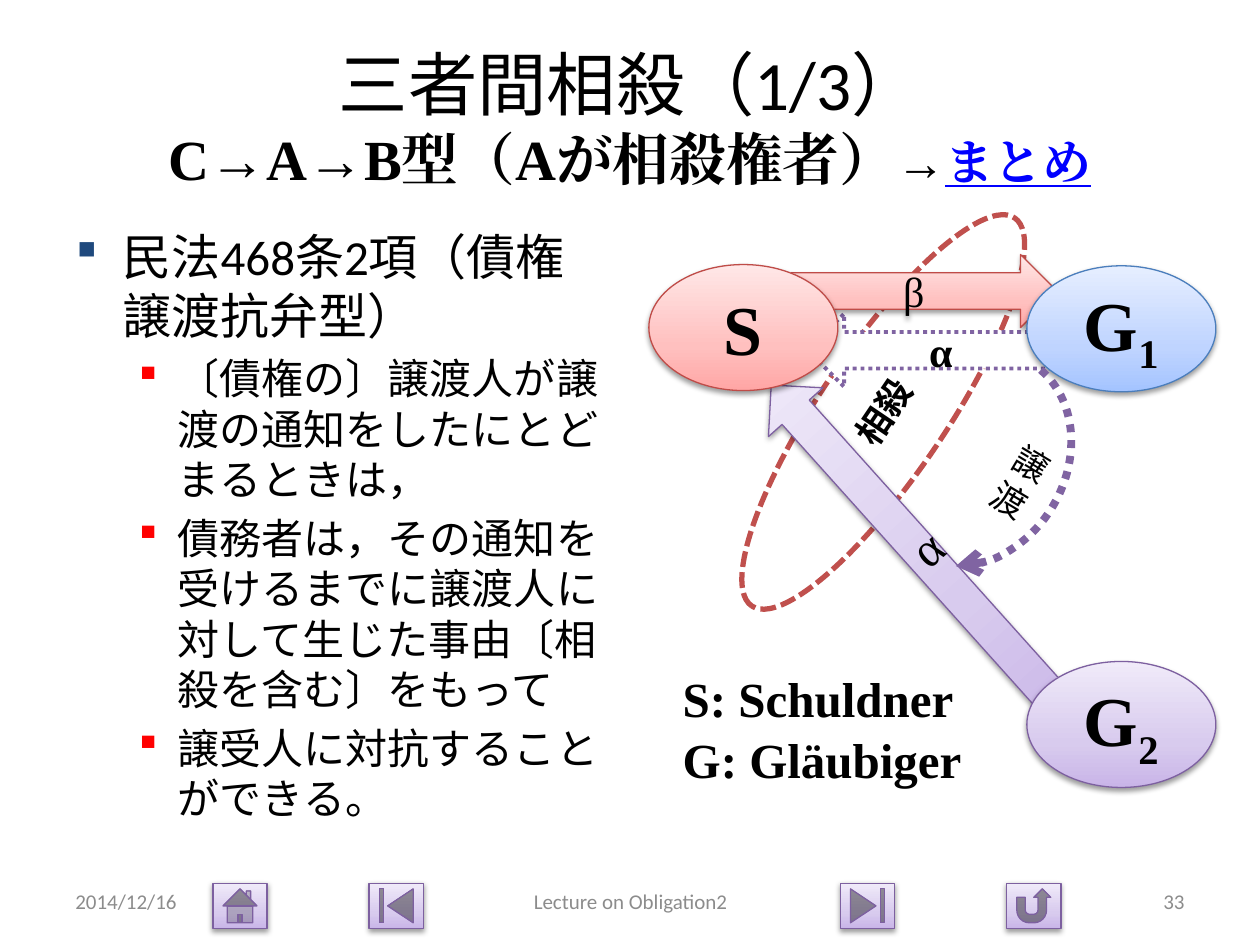
from dataclasses import dataclass

from pptx import Presentation
from pptx import util as u
from pptx.dml.color import RGBColor
from pptx.enum import dml, shapes, text
from pptx.oxml import parse_xml
from pptx.oxml.ns import nsdecls, qn

COLUMNS, ROWS = 100, 75
CELL = u.Inches(0.1)
CENTER = text.PP_ALIGN.CENTER
KIND = shapes.MSO_SHAPE


@dataclass(frozen=True)
class Theme:
    sans: str = "Calibri"
    serif: str = "Times New Roman"
    gothic: str = "Noto Sans CJK JP"
    ink: str = "000000"
    paper: str = "FFFFFF"
    muted: str = "8C8C8C"
    link: str = "0000FF"
    main_bullet: str = "1F497D"
    sub_bullet: str = "FF0000"
    offset_line: str = "C0504D"
    claim_line: str = "8064A2"
    red: tuple = ("BF4C48", "FFA6A5", "FFC0BF", "FFE7E7")
    blue: tuple = ("4B7EBC", "A4C4FF", "BFD4FF", "E6EEFF")
    purple: tuple = ("7D60A0", "C9B5E8", "D8CBEE", "F0EAF9")
    heading: float = 39.6
    subheading: float = 32.4
    link_size: float = 27.9
    party: float = 40
    body: float = 28
    detail: float = 24
    label: float = 20
    footer: float = 12


THEME = Theme()


def grid(*cells):
    return [round(cell * CELL) for cell in cells]


def write(paragraph, words, size, font=THEME.sans, color=THEME.ink,
          bold=False, underline=False, baseline=0, align=None):
    if align is not None:
        paragraph.alignment = align
    run = paragraph.add_run()
    run.text = words
    run.font.size = u.Pt(size)
    run.font.name = font
    run.font.bold = bold
    run.font.underline = underline
    run.font.color.rgb = RGBColor.from_string(color)
    props = run._r.get_or_add_rPr()
    props.find(qn("a:latin")).addnext(
        parse_xml(f'<a:ea {nsdecls("a")} typeface="{font}"/>'))
    if baseline:
        props.set("baseline", str(baseline * 1000))


def add_outline(slide, kind, cells, color, width, dash=None, fill=None, turn=0):
    figure = slide.shapes.add_shape(kind, *grid(*cells))
    figure.shadow.inherit = False
    figure.rotation = turn
    figure.line.color.rgb = RGBColor.from_string(color)
    figure.line.width = u.Pt(width)
    if dash is not None:
        figure.line.dash_style = dash
    if fill:
        figure.fill.solid()
        figure.fill.fore_color.rgb = RGBColor.from_string(fill)
    else:
        figure.fill.background()
    figure.text_frame.word_wrap = True
    figure.text_frame.vertical_anchor = text.MSO_ANCHOR.MIDDLE
    return figure


def add_glossy(slide, kind, cells, palette, turn=0):
    line, *tints = palette
    figure = add_outline(slide, kind, cells, line, 0.75, turn=turn)
    figure.fill.gradient()
    figure.fill.gradient_angle = 90
    props = figure._element.spPr
    stops = next(props.iter(qn("a:gsLst")))
    for stop in list(stops):
        stops.remove(stop)
    for share, tint in zip((0, 35, 100), tints):
        stops.append(parse_xml(
            f'<a:gs {nsdecls("a")} pos="{share * 1000}"><a:srgbClr val="{tint}"/></a:gs>'))
    props.find(qn("a:effectLst")).append(parse_xml(
        f'<a:outerShdw {nsdecls("a")} blurRad="{u.Pt(3.1)}" dist="{u.Pt(1.6)}" '
        'dir="5400000" rotWithShape="0"><a:srgbClr val="000000">'
        '<a:alpha val="38000"/></a:srgbClr></a:outerShdw>'))
    return figure


def label(figure, words, size, **style):
    write(figure.text_frame.paragraphs[0], words, size, align=CENTER, **style)


def add_party(slide, cells, palette, letter, index=""):
    party = add_glossy(slide, KIND.OVAL, cells, palette)
    label(party, letter, THEME.party, font=THEME.serif, bold=True)
    if index:
        label(party, index, THEME.party, font=THEME.serif, bold=True, baseline=-25)


def add_text(slide, cells, lines, size, anchor=text.MSO_ANCHOR.TOP, spacing=1.0, **style):
    frame = slide.shapes.add_textbox(*grid(*cells)).text_frame
    frame.word_wrap = True
    frame.vertical_anchor = anchor
    for number, words in enumerate(lines):
        paragraph = frame.add_paragraph() if number else frame.paragraphs[0]
        paragraph.line_spacing = spacing
        write(paragraph, words, size, **style)


def place(placeholder, cells):
    placeholder.left, placeholder.top, placeholder.width, placeholder.height = grid(*cells)
    placeholder.text_frame.auto_size = text.MSO_AUTO_SIZE.NONE
    return placeholder.text_frame


def fill_title(slide):
    frame = place(slide.shapes.title, (5, 3, 90, 12.5))
    frame.vertical_anchor = text.MSO_ANCHOR.MIDDLE
    heading = frame.paragraphs[0]
    write(heading, "三者間相殺（1/3）", THEME.heading, align=CENTER)
    heading.add_line_break()
    serif = dict(font=THEME.serif, bold=True)
    write(heading, "C→A→B型（Aが相殺権者）", THEME.subheading, **serif)
    write(heading, "→", THEME.link_size, **serif)
    write(heading, "まとめ", THEME.link_size, color=THEME.link, underline=True, **serif)


def fill_body(slide):
    frame = place(slide.placeholders[1], (5, 17.5, 44.2, 49.5))
    provisions = [
        (0, "民法468条2項（債権譲渡抗弁型）"),
        (1, "〔債権の〕譲渡人が譲渡の通知をしたにとどまるときは，"),
        (1, "債務者は，その通知を受けるまでに譲渡人に対して生じた事由〔相殺を含む〕をもって"),
        (1, "譲受人に対抗することができる。"),
    ]
    for number, (level, words) in enumerate(provisions):
        paragraph = frame.add_paragraph() if number else frame.paragraphs[0]
        paragraph.level = level
        color = (THEME.main_bullet, THEME.sub_bullet)[level]
        props = paragraph._p.get_or_add_pPr()
        for mark in (f'buClr {nsdecls("a")}><a:srgbClr val="{color}"/></a:buClr>',
                     f'buFont {nsdecls("a")} typeface="Wingdings" charset="2"/>',
                     f'buChar {nsdecls("a")} char="§"/>'):
            props.append(parse_xml("<a:" + mark))
        write(paragraph, words, (THEME.body, THEME.detail)[level])


def draw_claims(slide):
    offset = add_outline(slide, KIND.OVAL, (51.5, 27.7, 37.2, 10), THEME.offset_line, 3,
                         dml.MSO_LINE.SQUARE_DOT, turn=304.1)
    label(offset, "相殺", THEME.label, font=THEME.gothic, bold=True)
    old_claim = add_outline(slide, KIND.LEFT_ARROW, (64.1, 24.9, 19.7, 5.8),
                            THEME.claim_line, 2.25, dml.MSO_LINE.ROUND_DOT, fill=THEME.paper)
    label(old_claim, "α", THEME.detail, font=THEME.serif, bold=True)
    counterclaim = add_glossy(slide, KIND.RIGHT_ARROW, (62.6, 20.2, 21.3, 5.8), THEME.red)
    label(counterclaim, "β", THEME.detail, font=THEME.serif)
    new_claim = add_glossy(slide, KIND.UP_ARROW, (69.7, 26.2, 5.8, 34.1), THEME.purple, 318.1)
    label(new_claim, "α", THEME.body, font=THEME.serif)


def draw_assignment(slide):
    assignment = add_outline(slide, KIND.ARC, (69.8, 27.5, 14.8, 17.8), THEME.claim_line, 4.5,
                             dml.MSO_LINE.ROUND_DOT, turn=31)
    assignment.adjustments[0] = 165.92
    assignment.adjustments[1] = 40.73
    assignment.line._get_or_add_ln().append(
        parse_xml(f'<a:tailEnd {nsdecls("a")} type="arrow"/>'))
    label(assignment, "譲渡", THEME.label, font=THEME.gothic)


def add_footer(slide):
    buttons = [(16.9, KIND.ACTION_BUTTON_HOME), (29.3, KIND.ACTION_BUTTON_BEGINNING),
               (66.7, KIND.ACTION_BUTTON_END), (79.9, KIND.ACTION_BUTTON_RETURN)]
    for column, kind in buttons:
        add_glossy(slide, kind, (column, 70.1, 4.3, 3.6), THEME.purple)
    notes = [(5, 23.3, "2014/12/16", text.PP_ALIGN.LEFT),
             (34.2, 31.7, "Lecture on Obligation2", CENTER),
             (71.7, 23.3, "33", text.PP_ALIGN.RIGHT)]
    for column, width, words, align in notes:
        add_text(slide, (column, 69.5, width, 4), [words], THEME.footer,
                 anchor=text.MSO_ANCHOR.MIDDLE, color=THEME.muted, align=align)


def main():
    deck = Presentation()
    deck.slide_width, deck.slide_height = grid(COLUMNS, ROWS)
    slide = deck.slides.add_slide(deck.slide_layouts[1])
    fill_title(slide)
    fill_body(slide)
    add_footer(slide)
    draw_claims(slide)
    add_party(slide, (51.5, 21, 15, 10), THEME.red, "S")
    add_party(slide, (81.5, 21.1, 15, 10), THEME.blue, "G", "1")
    add_party(slide, (81.5, 52.5, 15, 10), THEME.purple, "G", "2")
    draw_assignment(slide)
    add_text(slide, (53.2, 52.3, 25.2, 10.4), ["S: Schuldner", "G: Gläubiger"], THEME.body,
             spacing=1.05, font=THEME.serif, bold=True)
    deck.save("out.pptx")


if __name__ == "__main__":
    main()
